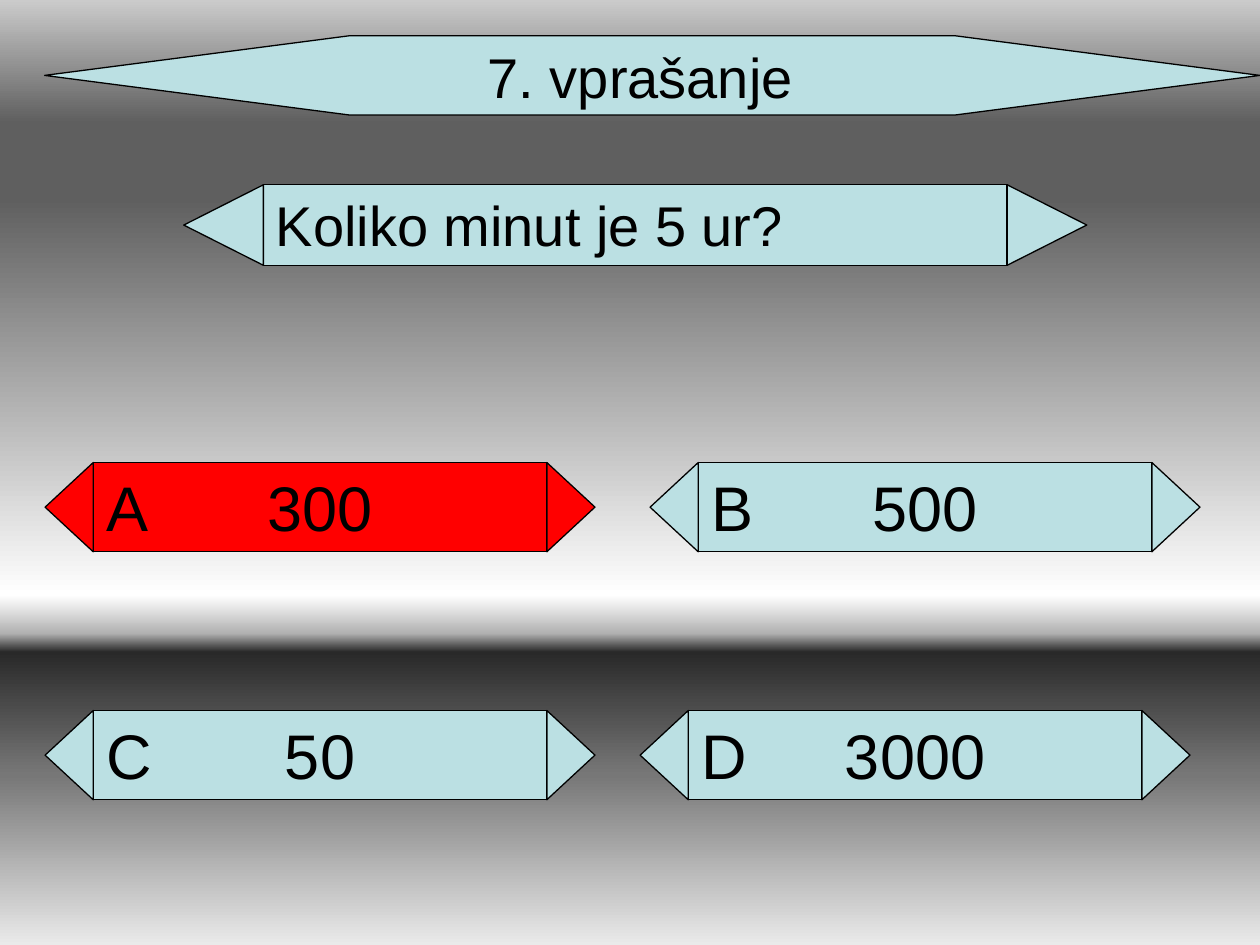
import pptx
import pptx.dml.color
import pptx.enum.shapes
import pptx.enum.text
import pptx.oxml
import pptx.oxml.ns
import pptx.util

Pt = pptx.util.Pt
KIND = pptx.enum.shapes.MSO_SHAPE
ALIGN = pptx.enum.text.PP_ALIGN

PALE, RED, BLACK = "BBE0E3", "FF0000", "000000"
STOPS = [(0, "CBCBCB"), (13, "5F5F5F"), (21, "5F5F5F"), (63, "FFFFFF"),
         (67, "B2B2B2"), (69, "292929"), (82, "777777"), (100, "EAEAEA")]


def color(code):
    return pptx.dml.color.RGBColor.from_string(code)


def apply(target, values):
    for name, value in values.items():
        setattr(target, name, value)


def write(shape, text, size, align=ALIGN.LEFT):
    frame = shape.text_frame
    frame.text = text
    apply(frame, {
        "word_wrap": True,
        "auto_size": pptx.enum.text.MSO_AUTO_SIZE.SHAPE_TO_FIT_TEXT,
        "vertical_anchor": pptx.enum.text.MSO_ANCHOR.TOP,
    })
    line = frame.paragraphs[0]
    line.alignment = align
    apply(line.font, {"name": "Arial", "size": Pt(size)})
    line.font.color.rgb = color(BLACK)


def draw(shapes, kind, box, fill):
    shape = shapes.add_shape(kind, *map(Pt, box))
    shape.shadow.inherit = False
    shape.fill.solid()
    shape.fill.fore_color.rgb = color(fill)
    shape.line.color.rgb = color(BLACK)
    shape.line.width = Pt(0.75)
    return shape


def backdrop(slide):
    fill = slide.background.fill
    fill.gradient()
    fill.gradient_angle = 270
    ns = pptx.oxml.ns.nsdecls("a")
    stops = slide.element.find(".//" + pptx.oxml.ns.qn("a:gsLst"))
    for old in list(stops):
        stops.remove(old)
    for place, code in STOPS:
        stops.append(pptx.oxml.parse_xml(
            f'<a:gs {ns} pos="{place * 1000}"><a:srgbClr val="{code}"/></a:gs>'))


def header(slide, box, text):
    left, top, width, height = box
    banner = draw(slide.shapes, KIND.HEXAGON, box, PALE)
    banner.adjustments[0] = 3.83
    banner.adjustments[1] = 1.15
    title = slide.shapes.title
    inner = 340
    apply(title, {
        "left": Pt(left + (width - inner) / 2 + 18), "top": Pt(top),
        "width": Pt(inner), "height": Pt(height),
    })
    title.left = Pt(196)
    write(title, text, 32, ALIGN.CENTER)
    banner.element.addnext(title.element)  # title in front of the banner


def bar(slide, box, tip, fill):
    """Group a rectangle with a pointed tip on either side."""
    left, top, width, height = box
    group = slide.shapes.add_group_shape()
    body = draw(group.shapes, KIND.RECTANGLE, box, fill)
    for turn, middle in ((90, left + width + tip / 2), (270, left - tip / 2)):
        frame = (middle - height / 2, top + (height - tip) / 2, height, tip)
        draw(group.shapes, KIND.ISOSCELES_TRIANGLE, frame, fill).rotation = turn
    return group, body


def question(slide, box, text):
    body = bar(slide, box, 45.5, PALE)[1]
    write(body, text, 32)


def answer(slide, box, letter, text, fill):
    left, top, width, height = box
    group, body = bar(slide, box, 27.5, fill)
    write(body, text, 36, ALIGN.CENTER)
    label = group.shapes.add_textbox(Pt(left + 0.7), Pt(top), Pt(34), Pt(height))
    write(label, letter, 36)


def main():
    deck = pptx.Presentation()
    apply(deck, {"slide_width": Pt(720), "slide_height": Pt(540)})
    slide = deck.slides.add_slide(deck.slide_layouts[5])
    backdrop(slide)
    header(slide, (25.5, 20.4, 694.5, 45.4), "7. vprašanje")
    question(slide, (150.5, 105.6, 425, 46), "Koliko minut je 5 ur?")
    for left, top, letter, text, fill in (
            (393.3, 406, "D", "3000", PALE), (53.3, 406, "C", "50", PALE),
            (399, 264.3, "B", "500", PALE), (53.3, 264.3, "A", "300", RED)):
        answer(slide, (left, top, 259.2, 51), letter, text, fill)
    deck.save("out.pptx")


if __name__ == "__main__":
    main()
